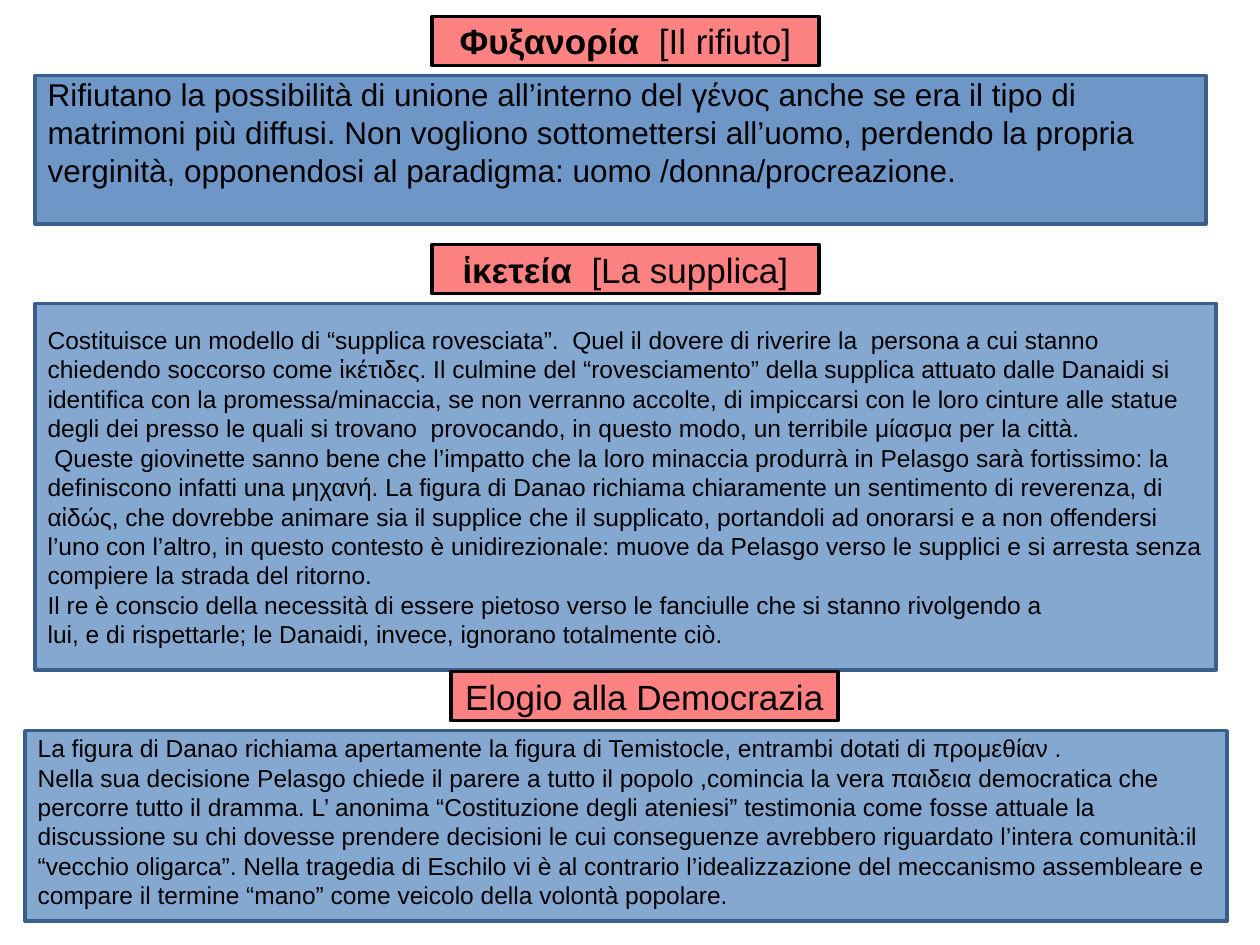
import pptx
import pptx.util
import pptx.dml.color
import pptx.enum.shapes
import pptx.enum.text
import pptx.oxml
import pptx.oxml.ns

Cm = pptx.util.Cm
Pt = pptx.util.Pt
ALIGN = pptx.enum.text.PP_ALIGN
ANCHOR = pptx.enum.text.MSO_ANCHOR


def tint(hue):
    return pptx.dml.color.RGBColor.from_string(hue)


def panel(place, fill, alpha, edge):
    """Add a rectangle with a see-through fill (alpha in percent)."""
    box = slide.shapes.add_shape(
        pptx.enum.shapes.MSO_SHAPE.RECTANGLE, *[Cm(n) for n in place])
    box.shadow.inherit = False
    box.fill.solid()
    box.fill.fore_color.rgb = tint(fill)
    node = box.fill._xPr.find(".//" + pptx.oxml.ns.qn("a:srgbClr"))
    node.append(pptx.oxml.parse_xml(
        f'<a:alpha {pptx.oxml.ns.nsdecls("a")} val="{alpha * 1000}"/>'))
    box.line.color.rgb = tint(edge)
    box.line.width = Pt(2)
    box.text_frame.word_wrap = True
    return box.text_frame


deck = pptx.Presentation()
deck.slide_width, deck.slide_height = Cm(25.4), Cm(19.05)
slide = deck.slides.add_slide(deck.slide_layouts[6])

# Body panels: place, alpha, text size, frame format, paragraphs
bodies = [
    ((0.71, 1.52, 23.6, 3), 82, 18,
     {"vertical_anchor": ANCHOR.TOP, "margin_top": 0},
     ["Rifiutano la possibilità di unione all’interno del γένος anche se era il tipo di "
      "matrimoni più diffusi. Non vogliono sottomettersi all’uomo, perdendo la propria "
      "verginità, opponendosi al paradigma: uomo /donna/procreazione."]),
    ((0.71, 6.12, 23.8, 7.39), 69, 14,
     {"vertical_anchor": ANCHOR.MIDDLE},
     ["Costituisce un modello di “supplica rovesciata”.  Quel il dovere di riverire la  "
      "persona a cui stanno chiedendo soccorso come ἱκέτιδες. Il culmine del "
      "“rovesciamento” della supplica attuato dalle Danaidi si identifica con la "
      "promessa/minaccia, se non verranno accolte, di impiccarsi con le loro cinture alle "
      "statue degli dei presso le quali si trovano  provocando, in questo modo, un "
      "terribile μίασμα per la città.",
      " Queste giovinette sanno bene che l’impatto che la loro minaccia produrrà in Pelasgo "
      "sarà fortissimo: la definiscono infatti una μηχανή. La figura di Danao richiama "
      "chiaramente un sentimento di reverenza, di αἰδώς, che dovrebbe animare sia il "
      "supplice che il supplicato, portandoli ad onorarsi e a non offendersi l’uno con "
      "l’altro, in questo contesto è unidirezionale: muove da Pelasgo verso le supplici e "
      "si arresta senza compiere la strada del ritorno.",
      "Il re è conscio della necessità di essere pietoso verso le fanciulle che si stanno "
      "rivolgendo a",
      "lui, e di rispettarle; le Danaidi, invece, ignorano totalmente ciò."]),
    ((0.51, 14.73, 24.23, 3.84), 69, 14,
     {"vertical_anchor": ANCHOR.TOP, "margin_top": Cm(0.05)},
     ["La figura di Danao richiama apertamente la figura di Temistocle, entrambi dotati di "
      "προμεθίαν .",
      "Nella sua decisione Pelasgo chiede il parere a tutto il popolo ,comincia la vera "
      "παιδεια democratica che percorre tutto il dramma. L’ anonima “Costituzione degli "
      "ateniesi” testimonia come fosse attuale la discussione su chi dovesse prendere "
      "decisioni le cui conseguenze avrebbero riguardato l’intera comunità:il “vecchio "
      "oligarca”. Nella tragedia di Eschilo vi è al contrario l’idealizzazione del "
      "meccanismo assembleare e compare il termine “mano” come veicolo della volontà "
      "popolare."]),
]

# Titles: left, top, bold part, plain part
heads = [
    (8.71, 0.33, "Φυξανορία", "  [Il rifiuto]"),
    (8.71, 4.93, "ἱκετεία ", " [La supplica]"),
    (9.09, 13.54, "", "Elogio alla Democrazia"),
]

style = {"name": "Arial"}

for place, alpha, size, form, texts in bodies:
    frame = panel(place, "4F81BD", alpha, "3A5F8C")
    for key, val in form.items():
        setattr(frame, key, val)
    frame.text = "\n".join(texts)
    for para in frame.paragraphs:
        para.alignment = ALIGN.LEFT
        font = para.runs[0].font
        for key, val in {**style, "size": Pt(size)}.items():
            setattr(font, key, val)
        font.color.rgb = tint("000000")

for left, top, bold, plain in heads:
    frame = panel((left, top, 7.8, 0.99), "FF0000", 49, "000000")
    frame.vertical_anchor = ANCHOR.MIDDLE
    para = frame.paragraphs[0]
    para.alignment = ALIGN.CENTER
    for text, heavy in ((bold, True), (plain, False)):
        if text:
            run = para.add_run()
            run.text = text
            for key, val in {**style, "size": Pt(20), "bold": heavy}.items():
                setattr(run.font, key, val)
            run.font.color.rgb = tint("000000")

deck.save("out.pptx")
